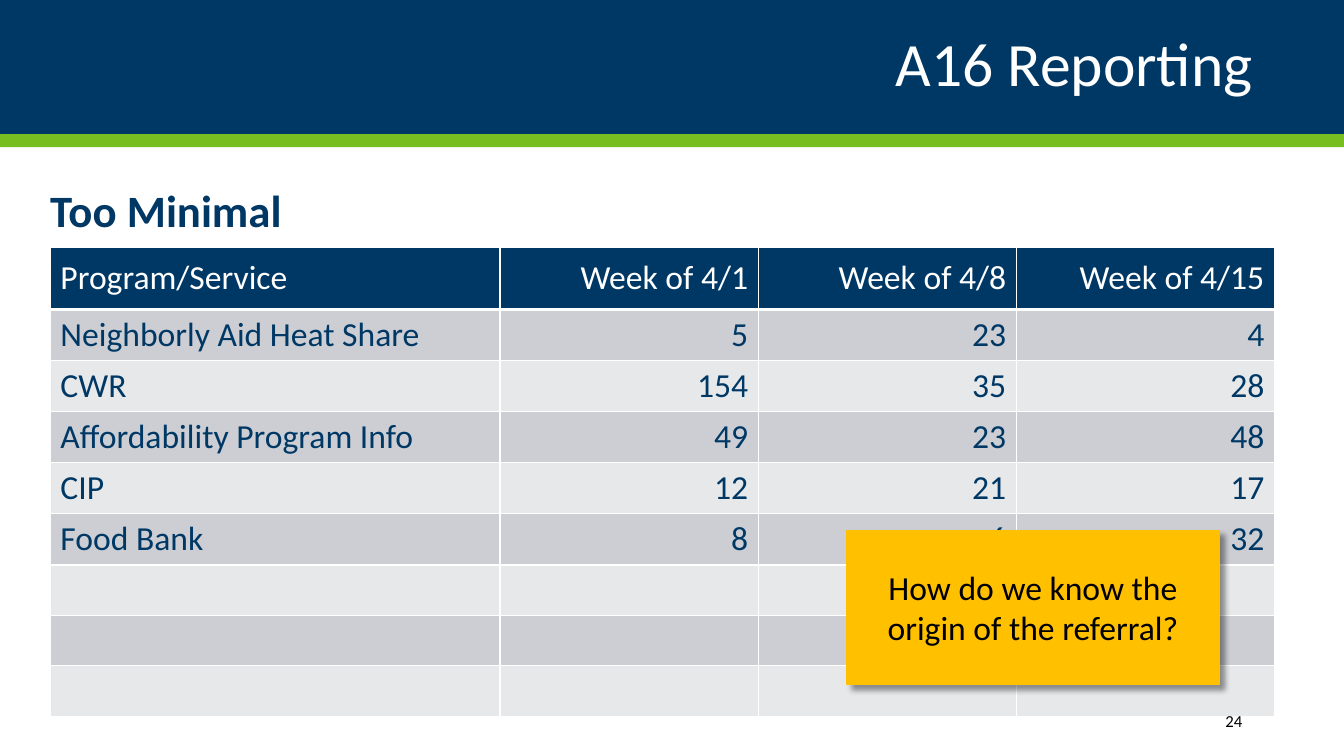
import pptx
import pptx.dml.color
import pptx.enum.shapes
import pptx.enum.text
import pptx.oxml
import pptx.oxml.ns
import pptx.util

PX = 9144  # EMU per px, 100 px to the inch
NAVY, GREEN, AMBER = "003865", "78BE21", "FFC000"
WHITE, BLACK = "FFFFFF", "000000"
BAND_DARK, BAND_LIGHT = "CCCED3", "E7E8EA"

ALIGN = pptx.enum.text.PP_ALIGN
MIDDLE = pptx.enum.text.MSO_ANCHOR.MIDDLE
TOP = pptx.enum.text.MSO_ANCHOR.TOP

REFERRALS = [
    ("Program/Service", "Week of 4/1", "Week of 4/8", "Week of 4/15"),
    ("Neighborly Aid Heat Share", "5", "23", "4"),
    ("CWR", "154", "35", "28"),
    ("Affordability Program Info", "49", "23", "48"),
    ("CIP", "12", "21", "17"),
    ("Food Bank", "8", "6", "32"),
] + [("",) * 4] * 3
COLUMN_WIDTHS = (446, 256, 256, 256)
HEADER_HEIGHT, ROW_HEIGHT = 62, 50


def px(length):
    return pptx.util.Emu(length * PX)


def rgb(hex_string):
    return pptx.dml.color.RGBColor.from_string(hex_string)


def set_all(target, values):
    for name, value in values.items():
        setattr(target, name, value)


def write(frame, text, size, color, bold=False, **paragraph_format):
    paragraph = frame.paragraphs[0]
    set_all(paragraph, paragraph_format)
    run = paragraph.add_run()
    run.text = text
    set_all(run.font, {"name": "Calibri", "size": pptx.util.Pt(size), "bold": bold})
    run.font.color.rgb = rgb(color)


def add_block(slide, box, fill):
    block = slide.shapes.add_shape(
        pptx.enum.shapes.MSO_SHAPE.RECTANGLE, *map(px, box))
    block.shadow.inherit = False
    block.fill.solid()
    block.fill.fore_color.rgb = rgb(fill)
    block.line.fill.background()
    set_all(block.text_frame, {"word_wrap": True, "vertical_anchor": MIDDLE})
    return block


def add_label(slide, box, anchor, text, size, color, **text_format):
    frame = slide.shapes.add_textbox(*map(px, box)).text_frame
    set_all(frame, {"word_wrap": True, "vertical_anchor": anchor})
    write(frame, text, size, color, **text_format)


def add_title_band(slide, text):
    add_block(slide, (0, 133, 1333, 13), GREEN)
    frame = add_block(slide, (0, 0, 1333, 133), NAVY).text_frame
    set_all(frame, {"margin_left": px(90), "margin_right": px(90)})
    write(frame, text, 44, WHITE, alignment=ALIGN.RIGHT, line_spacing=0.9)


def border_cell(cell, bottom_width):
    """Put white lines around a cell, before its fill is set."""
    properties = cell._tc.get_or_add_tcPr()
    for side, width in (("L", 1), ("R", 1), ("T", 1), ("B", bottom_width)):
        properties.append(pptx.oxml.parse_xml(
            f'<a:ln{side} {pptx.oxml.ns.nsdecls("a")} w="{pptx.util.Pt(width)}">'
            f'<a:solidFill><a:srgbClr val="{WHITE}"/></a:solidFill></a:ln{side}>'))


def add_referral_table(slide, left, top):
    height = HEADER_HEIGHT + ROW_HEIGHT * (len(REFERRALS) - 1)
    table = slide.shapes.add_table(
        len(REFERRALS), len(COLUMN_WIDTHS),
        *map(px, (left, top, sum(COLUMN_WIDTHS), height))).table
    for column, width in zip(table.columns, COLUMN_WIDTHS):
        column.width = px(width)
    for r, values in enumerate(REFERRALS):
        is_header = r == 0
        table.rows[r].height = px(HEADER_HEIGHT if is_header else ROW_HEIGHT)
        band = NAVY if is_header else BAND_DARK if r % 2 else BAND_LIGHT
        for c, value in enumerate(values):
            cell = table.cell(r, c)
            border_cell(cell, 3 if is_header else 1)
            cell.vertical_anchor = MIDDLE
            cell.fill.solid()
            cell.fill.fore_color.rgb = rgb(band)
            if value:
                write(cell.text_frame, value, 24, WHITE if is_header else NAVY,
                      alignment=ALIGN.RIGHT if c else ALIGN.LEFT)


def cast_shadow(block):
    effects = block._element.spPr.find(pptx.oxml.ns.qn("a:effectLst"))
    effects.append(pptx.oxml.parse_xml(
        f'<a:outerShdw {pptx.oxml.ns.nsdecls("a")} blurRad="{pptx.util.Pt(4)}" '
        f'dist="{pptx.util.Pt(5)}" dir="2700000" algn="tl" rotWithShape="0">'
        f'<a:srgbClr val="{BLACK}"><a:alpha val="40000"/></a:srgbClr></a:outerShdw>'))


def add_callout(slide, box, text):
    callout = add_block(slide, box, AMBER)
    callout.line.color.rgb = rgb(AMBER)
    callout.line.width = pptx.util.Pt(0.85)
    cast_shadow(callout)
    write(callout.text_frame, text, 24, BLACK, alignment=ALIGN.CENTER)


def main():
    deck = pptx.Presentation()
    set_all(deck, {"slide_width": px(1333), "slide_height": px(750)})
    slide = deck.slides.add_slide(deck.slide_layouts[6])
    add_title_band(slide, "A16 Reporting")
    add_referral_table(slide, 50, 245)
    add_label(slide, (40, 176, 740, 476), TOP, "Too Minimal", 32, NAVY, bold=True,
              space_before=pptx.util.Pt(10), space_after=pptx.util.Pt(10))
    add_label(slide, (1082, 695, 160, 40), MIDDLE, "24", 12, BLACK,
              alignment=ALIGN.RIGHT)
    add_callout(slide, (840, 526, 369, 153),
                "How do we know the origin of the referral?")
    deck.save("out.pptx")


if __name__ == "__main__":
    main()
